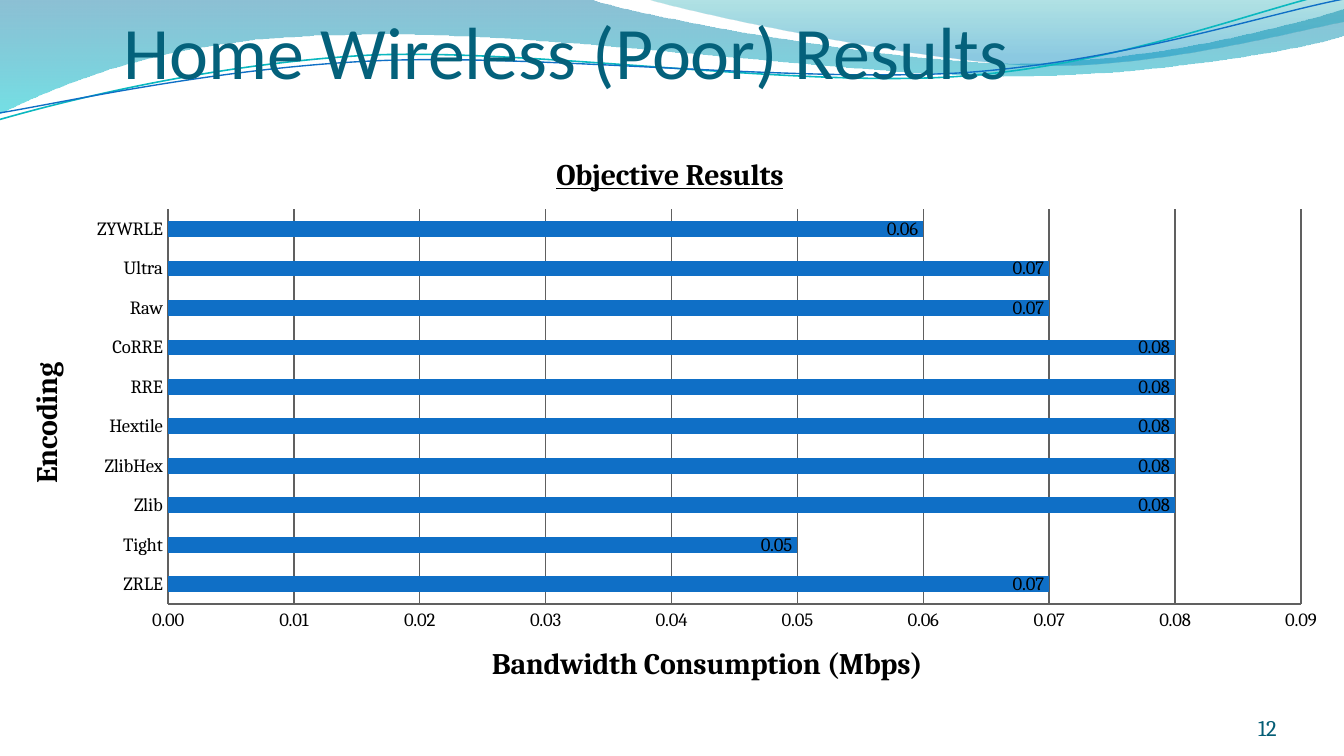
from pptx import Presentation, util as u
from pptx.chart.data import CategoryChartData
from pptx.dml.color import RGBColor
from pptx.enum import chart as charts, text
from pptx.oxml import xmlchemy
from pptx.oxml.ns import qn

Pt = u.Pt
TITLE_BLUE = RGBColor(0x04, 0x61, 0x7B)
NUMBER_BLUE = RGBColor(0x04, 0x5D, 0x75)
BAR_BLUE = RGBColor(0x0F, 0x6F, 0xC6)
TEAL = RGBColor(0x0A, 0xB8, 0xBF)
GRID_GREY = RGBColor(0x60, 0x60, 0x60)
BLACK = RGBColor(0, 0, 0)

# Each wave is a start and its segments: one point is a line, three are a Bézier
BANDS = [
    ([(0, 0), [(317, 0)],
      [(343, 9), (478, 34), (546, 34)], [(614, 34), (690, 14), (720, 5)],
      [(720, 19)],
      [(708, 24), (626, 41), (537, 41)], [(448, 40), (275, 15), (185, 19)],
      [(93, 19), (33, 45), (0, 61)]],
     [(0, RGBColor(0x00, 0x74, 0xA1), 45), (1, RGBColor(0x00, 0xC6, 0xCF), 55)]),
    ([(345, -1),
      [(366, 6), (491, 33), (554, 35)], [(616, 37), (692, 17), (720, 11.5)],
      [(720, 0)]],
     [(0, RGBColor(0x00, 0xA1, 0xA9), 30), (0.8, RGBColor(0x00, 0x8B, 0xBF), 45)]),
]
STROKES = [
    ([(0, 64), [(35, 54), (114, 34), (199, 29.5)],
      [(285, 26), (426, 47), (513, 41)], [(600, 35), (676, 4), (719, -5)]],
     TEAL, 0.85),
    ([(0, 60.5), [(34, 55), (118, 36), (204, 32.5)],
      [(290, 29), (426, 44.5), (516, 39)], [(602, 33), (678, 7.5), (720, -0.5)]],
     BAR_BLUE, 0.75),
]
BANDWIDTH = {
    "ZRLE": 0.07, "Tight": 0.05, "Zlib": 0.08, "ZlibHex": 0.08, "Hextile": 0.08,
    "RRE": 0.08, "CoRRE": 0.08, "Raw": 0.07, "Ultra": 0.07, "ZYWRLE": 0.06,
}


def add_wave(slide, left, top, outline, closed):
    start, *segments = outline
    builder = slide.shapes.build_freeform(Pt(start[0]), Pt(start[1]))
    builder.add_line_segments([(Pt(x), Pt(y)) for segment in segments for x, y in segment],
                              close=closed)
    wave = builder.convert_to_shape(Pt(left), Pt(top))
    wave.shadow.inherit = False
    # Turn each run of three lines into one Bézier curve
    lines = iter(list(wave.element.iter(qn("a:lnTo"))))
    for segment in segments:
        legs = [next(lines) for _ in segment]
        if len(legs) == 3:
            curve = xmlchemy.OxmlElement("a:cubicBezTo")
            legs[0].addprevious(curve)
            for leg in legs:
                curve.append(leg[0])
                leg.getparent().remove(leg)
    return wave


def add_header_waves(slide, left, top):
    # Translucent bands
    for outline, stops in BANDS:
        band = add_wave(slide, left, top, outline, True)
        band.line.fill.background()
        band.fill.gradient()
        band.fill.gradient_angle = 270
        for stop, (position, color, _) in zip(band.fill.gradient_stops, stops):
            stop.position = position
            stop.color.rgb = color
        for rgb, (_, _, opacity) in zip(band.element.iter(qn("a:srgbClr")), stops):
            alpha = xmlchemy.OxmlElement("a:alpha")
            alpha.set("val", str(opacity * 1000))
            rgb.append(alpha)
    # Thin strokes
    for outline, color, width in STROKES:
        stroke = add_wave(slide, left, top, outline, False)
        stroke.fill.background()
        stroke.line.color.rgb = color
        stroke.line.width = Pt(width)


def style_text(frame, content, font_name, size, color, align):
    frame.text = content
    frame.word_wrap = True
    frame.auto_size = text.MSO_AUTO_SIZE.NONE
    frame.vertical_anchor = text.MSO_ANCHOR.BOTTOM
    frame.margin_left = frame.margin_right = frame.margin_top = frame.margin_bottom = 0
    paragraph = frame.paragraphs[0]
    paragraph.alignment = align
    font = paragraph.runs[0].font
    font.name, font.size, font.color.rgb = font_name, Pt(size), color


def add_heading(slide, left, top, width, height):
    heading = slide.shapes.title
    heading.left, heading.top = Pt(left), Pt(top)
    heading.width, heading.height = Pt(width), Pt(height)
    style_text(heading.text_frame, "Home Wireless (Poor) Results",
               "Calibri", 39.6, TITLE_BLUE, text.PP_ALIGN.LEFT)
    slide.shapes.element.append(heading.element)  # in front of the waves


def add_page_number(slide, left, top, width, height):
    number = slide.shapes.add_textbox(Pt(left), Pt(top), Pt(width), Pt(height))
    style_text(number.text_frame, "12", "Cambria", 12, NUMBER_BLUE, text.PP_ALIGN.RIGHT)


def set_layout(parent, index, **fractions):
    """Place a chart part by fractions of the chart area."""
    for old in parent.findall(qn("c:layout")):
        parent.remove(old)
    layout = xmlchemy.OxmlElement("c:layout")
    manual = xmlchemy.OxmlElement("c:manualLayout")
    layout.append(manual)
    settings = {"xMode": "edge", "yMode": "edge", **fractions}
    if "w" in fractions:
        settings = {"layoutTarget": "inner", **settings}
    for tag, value in settings.items():
        setting = xmlchemy.OxmlElement(f"c:{tag}")
        setting.set("val", str(value))
        manual.append(setting)
    parent.insert(index, layout)


def style_chart_title(title, content, x, y, underline=False):
    title.text_frame.text = content
    font = title.text_frame.paragraphs[0].runs[0].font
    font.name, font.size, font.color.rgb = "Cambria", Pt(16), BLACK
    font.bold, font.underline = True, underline
    set_layout(title.element, 1, x=x, y=y)


def add_bandwidth_chart(slide, left, top, width, height):
    data = CategoryChartData(number_format="0.00")
    data.categories = list(BANDWIDTH)
    data.add_series("Series 1", list(BANDWIDTH.values()))
    chart = slide.shapes.add_chart(charts.XL_CHART_TYPE.BAR_CLUSTERED, Pt(left), Pt(top),
                                   Pt(width), Pt(height), data).chart
    chart.font.name, chart.font.size, chart.font.color.rgb = "Cambria", Pt(10), BLACK
    chart.has_legend = False
    style_chart_title(chart.chart_title, "Objective Results", 0.41, 0.03, underline=True)
    set_layout(chart.element.find(".//" + qn("c:plotArea")), 0,
               x=0.125, y=0.133, w=0.843, h=0.682)

    # Axes
    encoding, bandwidth = chart.category_axis, chart.value_axis
    for axis, name, x, y in ((encoding, "Encoding", 0.016, 0.388),
                             (bandwidth, "Bandwidth Consumption (Mbps)", 0.362, 0.876)):
        style_chart_title(axis.axis_title, name, x, y)
        axis.major_tick_mark = axis.minor_tick_mark = charts.XL_TICK_MARK.NONE
        axis.format.line.color.rgb = GRID_GREY
    encoding.axis_title.element.find(".//" + qn("a:bodyPr")).set("rot", "-5400000")
    encoding.has_major_gridlines = False
    bandwidth.minimum_scale, bandwidth.maximum_scale = 0, 0.09
    bandwidth.major_unit = 0.01
    bandwidth.tick_labels.number_format = "0.00"
    bandwidth.tick_labels.number_format_is_linked = False
    bandwidth.major_gridlines.format.line.color.rgb = GRID_GREY
    bandwidth.major_gridlines.format.line.width = Pt(0.75)

    # Bars and their labels
    plot = chart.plots[0]
    plot.gap_width = 150
    plot.vary_by_categories = False
    bars = plot.series[0]
    bars.format.fill.solid()
    bars.format.fill.fore_color.rgb = BAR_BLUE
    labels = bars.data_labels
    labels.show_value = True
    labels.position = charts.XL_LABEL_POSITION.INSIDE_END
    labels.number_format, labels.number_format_is_linked = "0.00", False
    labels.font.name, labels.font.size, labels.font.color.rgb = "Cambria", Pt(10), BLACK


def main():
    deck = Presentation()
    deck.slide_width, deck.slide_height = Pt(720), Pt(405)
    slide = deck.slides.add_slide(deck.slide_layouts[5])
    add_header_waves(slide, 0, 0)
    add_heading(slide, 66, 0, 624, 50.5)
    add_page_number(slide, 624, 375, 60, 22)
    add_bandwidth_chart(slide, 0, 71, 720, 310)
    deck.save("out.pptx")


if __name__ == "__main__":
    main()
